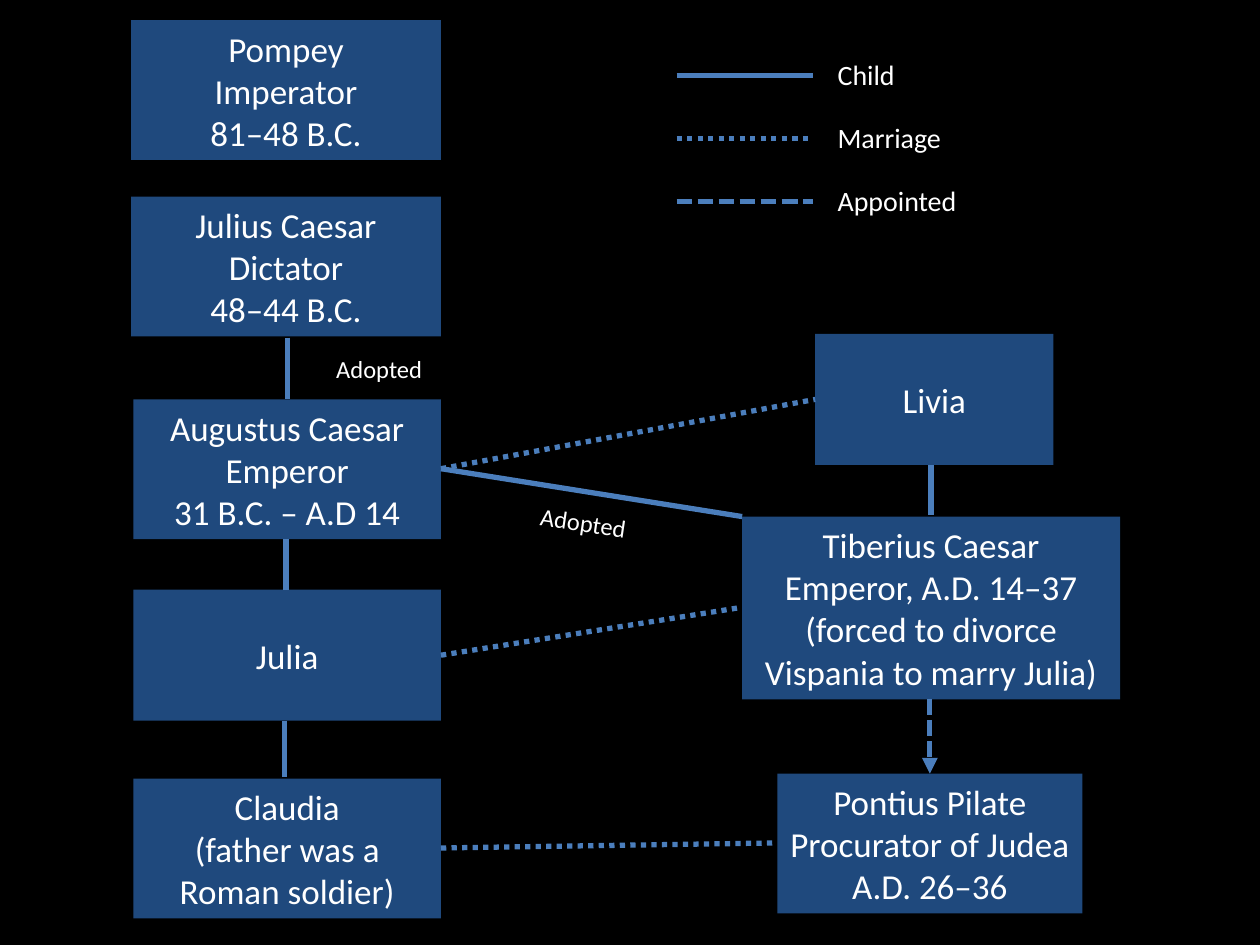
import pptx
import pptx.dml.color
import pptx.enum.dml
import pptx.enum.shapes
import pptx.enum.text
import pptx.oxml
import pptx.oxml.ns
import pptx.util
from pptx.util import Inches

COLORS = {"back": "000000", "box": "1F497D", "line": "4B7EBC", "text": "FFFFFF"}
DASH = pptx.enum.dml.MSO_LINE
CHILD, MARRIAGE, APPOINTED = None, DASH.ROUND_DOT, DASH.SQUARE_DOT


def rgb(name):
    return pptx.dml.color.RGBColor.from_string(COLORS[name])


def apply(target, formats):
    for name, value in formats.items():
        setattr(target, name, value)


class FamilyTree:
    """Draws the boxes, labels and links of a family tree on one slide."""

    font = {"name": "Calibri"}
    box_frame = {"word_wrap": True,
                 "vertical_anchor": pptx.enum.text.MSO_ANCHOR.MIDDLE}
    label_frame = {"word_wrap": False,
                   "auto_size": pptx.enum.text.MSO_AUTO_SIZE.SHAPE_TO_FIT_TEXT}

    def __init__(self, s):
        self.s = s
        s.background.fill.solid()
        s.background.fill.fore_color.rgb = rgb("back")

    def add_lines(self, tf, lines, size, align):
        for i, line in enumerate(lines):
            p = tf.add_paragraph() if i else tf.paragraphs[0]
            p.alignment = align
            r = p.add_run()
            r.text = line
            apply(r.font, {**self.font, "size": pptx.util.Pt(size)})
            r.font.color.rgb = rgb("text")

    def box(self, x, y, w, h, *lines):
        sp = self.s.shapes.add_shape(
            pptx.enum.shapes.MSO_SHAPE.RECTANGLE, *map(Inches, (x, y, w, h)))
        sp.shadow.inherit = False
        sp.fill.solid()
        sp.fill.fore_color.rgb = rgb("box")
        sp.line.fill.background()
        apply(sp.text_frame, self.box_frame)
        self.add_lines(sp.text_frame, lines, 20,
                       pptx.enum.text.PP_ALIGN.CENTER)

    def label(self, x, y, w, h, text, size, rotation=0):
        sp = self.s.shapes.add_textbox(*map(Inches, (x, y, w, h)))
        sp.rotation = rotation
        apply(sp.text_frame, self.label_frame)
        self.add_lines(sp.text_frame, [text], size,
                       pptx.enum.text.PP_ALIGN.LEFT)

    def link(self, x1, y1, x2, y2, dash=CHILD, arrow=False):
        sp = self.s.shapes.add_connector(
            pptx.enum.shapes.MSO_CONNECTOR.STRAIGHT,
            *map(Inches, (x1, y1, x2, y2)))
        sp.line.color.rgb = rgb("line")
        apply(sp.line, {"width": pptx.util.Pt(3), "dash_style": dash})
        props = sp._element.spPr
        if arrow:
            tail = pptx.oxml.parse_xml(
                f'<a:tailEnd {pptx.oxml.ns.nsdecls("a")} type="triangle"/>')
            props.get_or_add_ln().append(tail)
        props.append(pptx.oxml.parse_xml(
            f'<a:effectLst {pptx.oxml.ns.nsdecls("a")}/>'))


def main():
    prs = pptx.Presentation()
    apply(prs, {"slide_width": Inches(10), "slide_height": Inches(7.5)})
    tree = FamilyTree(prs.slides.add_slide(prs.slide_layouts[6]))

    boxes = [
        (1.04, 0.16, 2.46, 1.11, "Pompey", "Imperator", "81–48 B.C."),
        (1.04, 1.56, 2.46, 1.11, "Julius Caesar", "Dictator", "48–44 B.C."),
        (1.06, 3.17, 2.44, 1.11, "Augustus Caesar", "Emperor",
         "31 B.C. – A.D 14"),
        (1.06, 4.68, 2.44, 1.04, "Julia"),
        (1.06, 6.18, 2.44, 1.11, "Claudia", "(father was a Roman soldier)"),
        (6.47, 2.65, 1.89, 1.04, "Livia"),
        (5.89, 4.1, 3, 1.45, "Tiberius Caesar", "Emperor, A.D. 14–37",
         "(forced to divorce Vispania to marry Julia)"),
        (6.17, 6.14, 2.42, 1.11, "Pontius Pilate", "Procurator of Judea",
         "A.D. 26–36"),
    ]
    for box in boxes:
        tree.box(*box)

    links = [
        (2.28, 2.68, 2.28, 3.17),
        (2.27, 4.28, 2.27, 4.68),
        (2.26, 5.72, 2.26, 6.17),
        (7.39, 3.69, 7.39, 4.09),
        (3.5, 3.72, 5.89, 4.1),
        (3.5, 3.72, 6.47, 3.17, MARRIAGE),
        (3.5, 5.2, 5.89, 4.82, MARRIAGE),
        (3.5, 6.73, 6.17, 6.69, MARRIAGE),
        (7.38, 5.55, 7.38, 6.14, APPOINTED, True),
    ]
    for link in links:
        tree.link(*link)

    tree.label(2.57, 2.76, 0.89, 0.34, "Adopted", 14)
    tree.label(4.19, 3.98, 0.89, 0.34, "Adopted", 14, 8.5)

    legend = [("Child", 0.66, CHILD), ("Marriage", 1.03, MARRIAGE),
              ("Appointed", 1.15, APPOINTED)]
    for i, (text, width, dash) in enumerate(legend):
        y = 0.6 + 0.5 * i
        tree.link(5.37, y, 6.45, y, dash)
        tree.label(6.55, y - 0.19, width, 0.37, text, 16)

    prs.save("out.pptx")


if __name__ == "__main__":
    main()
